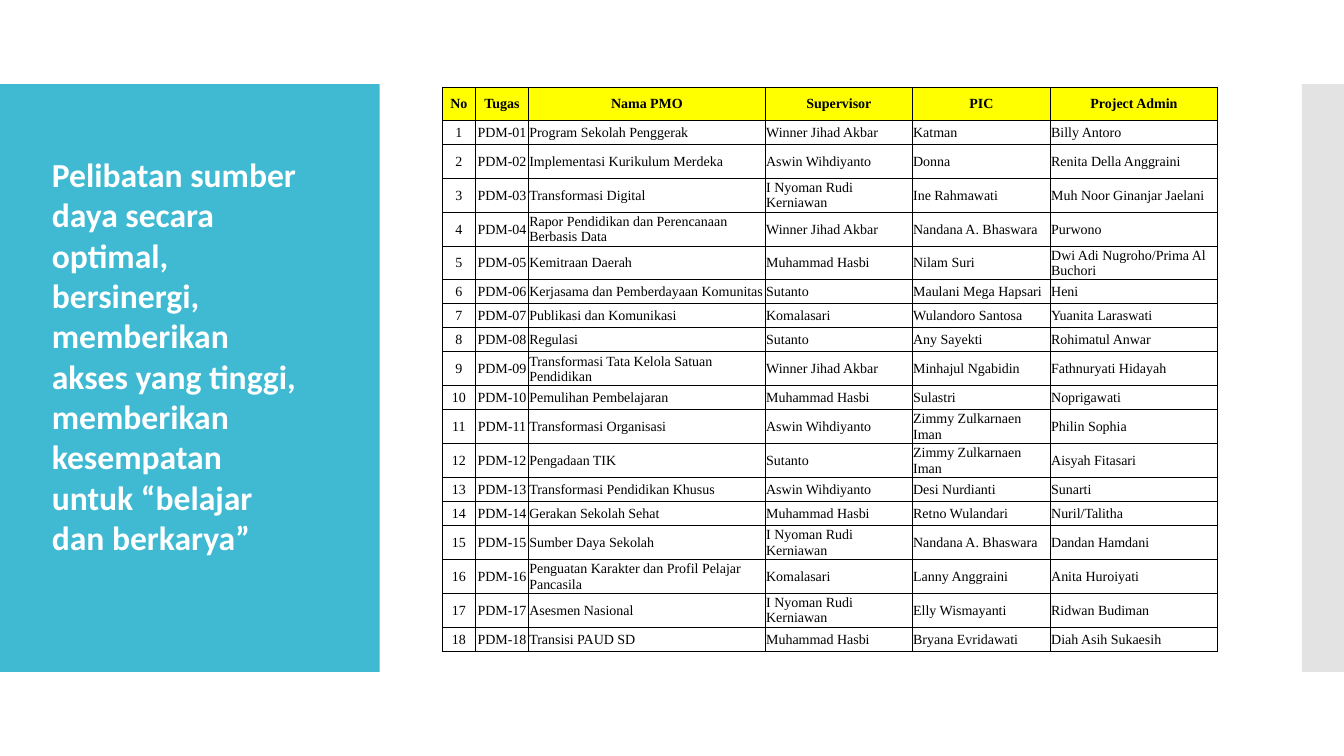
"""Build the slide that lists PMO assignments beside a statement panel."""
from dataclasses import dataclass

from lxml import etree
from pptx import Presentation
from pptx.dml.color import RGBColor
from pptx.enum.shapes import MSO_SHAPE
from pptx.enum.text import MSO_ANCHOR, PP_ALIGN
from pptx.oxml.ns import qn
from pptx.util import Pt

RECTANGLE = MSO_SHAPE.RECTANGLE
MIDDLE = MSO_ANCHOR.MIDDLE
CENTER, LEFT = PP_ALIGN.CENTER, PP_ALIGN.LEFT

STATEMENT = (
    "Pelibatan sumber daya secara optimal, bersinergi, memberikan akses yang tinggi, "
    "memberikan kesempatan untuk “belajar dan berkarya”"
)
HEADERS = ("No", "Tugas", "Nama PMO", "Supervisor", "PIC", "Project Admin")
ASSIGNMENTS = [
    ("Program Sekolah Penggerak", "Winner Jihad Akbar", "Katman", "Billy Antoro"),
    ("Implementasi Kurikulum Merdeka", "Aswin Wihdiyanto", "Donna", "Renita Della Anggraini"),
    ("Transformasi Digital", "I Nyoman Rudi Kerniawan", "Ine Rahmawati", "Muh Noor Ginanjar Jaelani"),
    ("Rapor Pendidikan dan Perencanaan Berbasis Data", "Winner Jihad Akbar", "Nandana A. Bhaswara", "Purwono"),
    ("Kemitraan Daerah", "Muhammad Hasbi", "Nilam Suri", "Dwi Adi Nugroho/Prima Al Buchori"),
    ("Kerjasama dan Pemberdayaan Komunitas", "Sutanto", "Maulani Mega Hapsari", "Heni"),
    ("Publikasi dan Komunikasi", "Komalasari", "Wulandoro Santosa", "Yuanita Laraswati"),
    ("Regulasi", "Sutanto", "Any Sayekti", "Rohimatul Anwar"),
    ("Transformasi Tata Kelola Satuan Pendidikan", "Winner Jihad Akbar", "Minhajul Ngabidin", "Fathnuryati Hidayah"),
    ("Pemulihan Pembelajaran", "Muhammad Hasbi", "Sulastri", "Noprigawati"),
    ("Transformasi Organisasi", "Aswin Wihdiyanto", "Zimmy Zulkarnaen Iman", "Philin Sophia"),
    ("Pengadaan TIK", "Sutanto", "Zimmy Zulkarnaen Iman", "Aisyah Fitasari"),
    ("Transformasi Pendidikan Khusus", "Aswin Wihdiyanto", "Desi Nurdianti", "Sunarti"),
    ("Gerakan Sekolah Sehat", "Muhammad Hasbi", "Retno Wulandari", "Nuril/Talitha"),
    ("Sumber Daya Sekolah", "I Nyoman Rudi Kerniawan", "Nandana A. Bhaswara", "Dandan Hamdani"),
    ("Penguatan Karakter dan Profil Pelajar Pancasila", "Komalasari", "Lanny Anggraini", "Anita Huroiyati"),
    ("Asesmen Nasional", "I Nyoman Rudi Kerniawan", "Elly Wismayanti", "Ridwan Budiman"),
    ("Transisi PAUD SD", "Muhammad Hasbi", "Bryana Evridawati", "Diah Asih Sukaesih"),
]
TALL_ROWS = {2, 3, 4, 5, 9, 11, 12, 15, 16, 17}
HEADER_HEIGHT, TALL_HEIGHT, SHORT_HEIGHT = 23.8, 24.2, 17.15
COLUMN_WIDTHS = (23.6, 37.9, 169.2, 105, 98.6, 119.3)
CENTERED_COLUMNS = 2
PAGE_WIDTH, PAGE_HEIGHT = 960, 540
BAND_TOP, BAND_HEIGHT = 60, 420
PANEL_WIDTH, STRIP_WIDTH = 271.2, 30


@dataclass(frozen=True)
class Theme:
    """Colours, fonts and type sizes."""
    panel: str = "40BAD2"
    strip: str = "C8C8C8"
    header: str = "FFFF00"
    ink: str = "000000"
    light: str = "FFFFFF"
    statement_font: str = "Calibri"
    table_font: str = "Times New Roman"
    statement_size: float = 24
    statement_leading: float = 28.8
    table_size: float = 10
    border_width: float = 0.5


THEME = Theme()


def style_font(para, name, size, color, bold):
    """Set the font of a whole paragraph."""
    font = para.font
    font.name, font.size, font.bold = name, Pt(size), bold
    font.color.rgb = RGBColor.from_string(color)


def add_band(page, left, width, color):
    """Add a plain rectangle across the band and return it."""
    band = page.shapes.add_shape(RECTANGLE, Pt(left), Pt(BAND_TOP), Pt(width), Pt(BAND_HEIGHT))
    band.shadow.inherit = False
    band.fill.solid()
    band.fill.fore_color.rgb = RGBColor.from_string(color)
    band.line.fill.background()
    return band


def add_statement(page):
    """Add the statement over the coloured panel."""
    box = page.shapes.add_textbox(Pt(30), Pt(106.5), Pt(198.7), Pt(327))
    box.text_frame.word_wrap = True
    para = box.text_frame.paragraphs[0]
    para.text = STATEMENT
    para.line_spacing = Pt(THEME.statement_leading)
    style_font(para, THEME.statement_font, THEME.statement_size, THEME.light, True)


def add_borders(cell):
    """Draw a thin line on the four sides of a cell."""
    properties = cell._tc.get_or_add_tcPr()
    for side in ("a:lnL", "a:lnR", "a:lnT", "a:lnB"):
        line = etree.SubElement(properties, qn(side), w=str(Pt(THEME.border_width)))
        fill = etree.SubElement(line, qn("a:solidFill"))
        etree.SubElement(fill, qn("a:srgbClr"), val=THEME.ink)


def fill_cell(cell, text, is_header, is_centered):
    """Write and style one table cell."""
    cell.margin_left = cell.margin_right = cell.margin_top = Pt(0.6)
    cell.margin_bottom = 0
    cell.vertical_anchor = MIDDLE
    add_borders(cell)
    if is_header:
        cell.fill.solid()
        cell.fill.fore_color.rgb = RGBColor.from_string(THEME.header)
    else:
        cell.fill.background()
    para = cell.text_frame.paragraphs[0]
    para.text = text
    para.alignment = CENTER if is_centered else LEFT
    style_font(para, THEME.table_font, THEME.table_size, THEME.ink, is_header)


def add_assignments(page):
    """Add the table of assignments, numbered by row."""
    rows = [HEADERS] + [
        (str(number), f"PDM-{number:02}", *names)
        for number, names in enumerate(ASSIGNMENTS, 1)
    ]
    heights = [HEADER_HEIGHT] + [
        TALL_HEIGHT if number in TALL_ROWS else SHORT_HEIGHT
        for number in range(1, len(rows))
    ]
    frame = page.shapes.add_table(
        len(rows), len(HEADERS), Pt(316), Pt(62.2), Pt(sum(COLUMN_WIDTHS)), Pt(sum(heights))
    )
    table = frame.table
    table.horz_banding = False
    for column, width in zip(table.columns, COLUMN_WIDTHS):
        column.width = Pt(width)
    for row_index, (texts, height) in enumerate(zip(rows, heights)):
        table.rows[row_index].height = Pt(height)
        is_header = row_index == 0
        for column_index, text in enumerate(texts):
            is_centered = is_header or column_index < CENTERED_COLUMNS
            fill_cell(table.cell(row_index, column_index), text, is_header, is_centered)


def main():
    """Assemble and save the deck."""
    deck = Presentation()
    deck.slide_width, deck.slide_height = Pt(PAGE_WIDTH), Pt(PAGE_HEIGHT)
    page = deck.slides.add_slide(deck.slide_layouts[6])
    add_band(page, 0, PANEL_WIDTH, THEME.panel)
    strip = add_band(page, PAGE_WIDTH - STRIP_WIDTH, STRIP_WIDTH, THEME.strip)
    strip_color = strip._element.spPr.find(qn("a:solidFill")).find(qn("a:srgbClr"))
    etree.SubElement(strip_color, qn("a:alpha"), val="50000")
    add_assignments(page)
    add_statement(page)
    deck.save("out.pptx")


if __name__ == "__main__":
    main()
